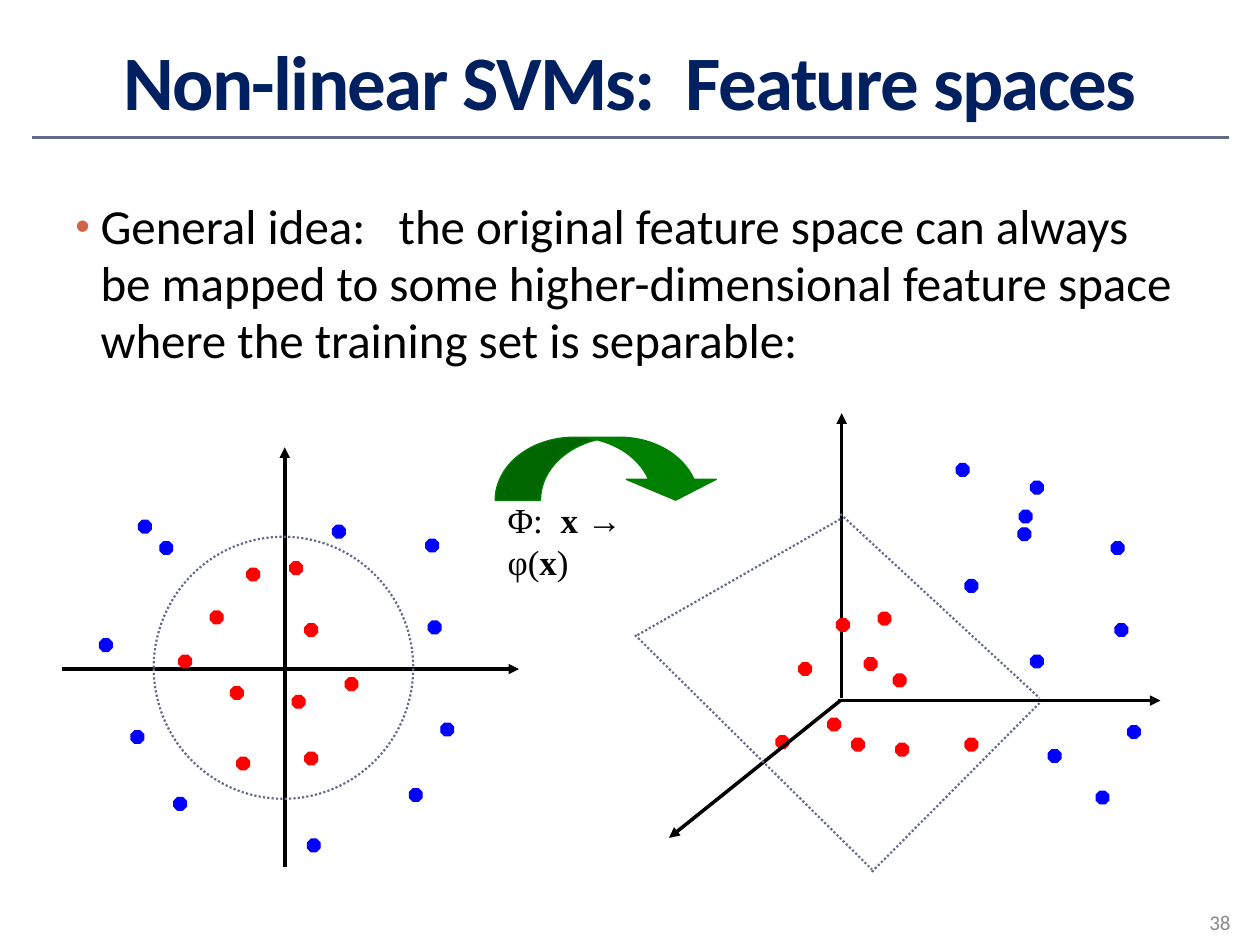
from dataclasses import dataclass

from pptx import Presentation
from pptx.dml.color import RGBColor
from pptx.enum.dml import MSO_LINE
from pptx.enum.shapes import MSO_CONNECTOR, MSO_SHAPE
from pptx.enum.text import MSO_ANCHOR, MSO_AUTO_SIZE, PP_ALIGN
from pptx.oxml.ns import qn
from pptx.util import Inches, Pt
from lxml import etree

STRAIGHT = MSO_CONNECTOR.STRAIGHT
OCTAGON, OVAL = MSO_SHAPE.OCTAGON, MSO_SHAPE.OVAL
ARROW = MSO_SHAPE.CURVED_DOWN_ARROW
DOTTED = MSO_LINE.ROUND_DOT
MIDDLE, TOP = MSO_ANCHOR.MIDDLE, MSO_ANCHOR.TOP
CENTER, LEFT = PP_ALIGN.CENTER, PP_ALIGN.LEFT
DOT = 0.1


@dataclass(frozen=True)
class Theme:
    navy: str = "002060"
    slate: str = "646B86"
    black: str = "000000"
    grey: str = "898989"
    bullet: str = "D16349"
    red: str = "FF0000"
    blue: str = "0000FF"
    green: str = "008000"
    sans: str = "Calibri"
    serif: str = "Times New Roman"
    title: int = 44
    body: int = 28
    math: int = 20
    note: int = 12


@dataclass(frozen=True)
class Line:
    start: tuple[float, float]
    end: tuple[float, float]
    color: str
    width: float
    arrow: bool = False
    dotted: bool = False


@dataclass(frozen=True)
class Cloud:
    color: str
    spots: tuple[tuple[float, float], ...]


T = Theme()


def axis(start: tuple[float, float], end: tuple[float, float]) -> Line:
    return Line(start, end, T.black, 2, arrow=True)


def edge(start: tuple[float, float], end: tuple[float, float]) -> Line:
    return Line(start, end, T.slate, 1.25, dotted=True)


RULE = Line((0.25, 1.09), (9.75, 1.09), T.slate, 1.5)
FLAT_AXES = (axis((2.26, 6.88), (2.26, 3.55)), axis((0.49, 5.31), (4.12, 5.31)))
DEEP_AXES = (axis((6.68, 5.54), (6.68, 3.28)), axis((6.65, 5.56), (9.21, 5.56)))
FRONT = (
    axis((6.67, 5.56), (5.31, 6.65)),
    edge((6.67, 4.08), (8.25, 5.54)),
    edge((6.92, 6.92), (8.25, 5.58)),
    edge((5.06, 5.04), (6.67, 4.12)),
    edge((5.04, 5.04), (6.92, 6.9)),
)
FLAT_DOTS = (
    Cloud(T.red, (
        (2.3, 4.46), (1.67, 4.85), (1.83, 5.45), (2.42, 5.97), (1.96, 4.51),
        (1.42, 5.2), (1.88, 6.01), (2.42, 4.95), (2.74, 5.38), (2.32, 5.52))),
    Cloud(T.blue, (
        (3.4, 4.93), (3.25, 6.26), (0.79, 5.07), (2.44, 6.66), (3.5, 5.74),
        (1.38, 6.33), (1.04, 5.8), (1.1, 4.13), (2.64, 4.17), (1.27, 4.3),
        (3.38, 4.28))),
)
DEEP_DOTS = (
    Cloud(T.red, (
        (6.97, 4.86), (6.34, 5.26), (6.76, 5.86), (7.66, 5.86), (6.64, 4.91),
        (6.86, 5.22), (7.11, 5.9), (7.09, 5.35), (6.57, 5.7), (6.16, 5.84))),
    Cloud(T.blue, (
        (8.85, 4.95), (8.7, 6.28), (8.18, 3.82), (8.18, 5.2), (8.95, 5.76),
        (7.66, 4.6), (8.32, 5.95), (8.09, 4.05), (8.08, 4.19), (7.59, 3.68),
        (8.82, 4.3))),
)


def rgb(color: str) -> RGBColor:
    return RGBColor.from_string(color)


def draw_line(slide, line: Line) -> None:
    ends = [Inches(v) for v in (*line.start, *line.end)]
    item = slide.shapes.add_connector(STRAIGHT, *ends)
    item.line.color.rgb = rgb(line.color)
    item.line.width = Pt(line.width)
    if line.dotted:
        item.line.dash_style = DOTTED
    props = item._element.spPr
    if line.arrow:
        etree.SubElement(props.find(qn("a:ln")), qn("a:tailEnd"), type="triangle")
    etree.SubElement(props, qn("a:effectLst"))


def draw_shape(slide, kind, box: tuple, color: str, width: float = 0.75, filled: bool = True):
    item = slide.shapes.add_shape(kind, *map(Inches, box))
    item.shadow.inherit = False
    if filled:
        item.fill.solid()
        item.fill.fore_color.rgb = rgb(color)
    else:
        item.fill.background()
    item.line.color.rgb = rgb(color)
    item.line.width = Pt(width)
    return item


def draw_dots(slide, clouds: tuple[Cloud, ...]) -> None:
    for cloud in clouds:
        for left, top in cloud.spots:
            draw_shape(slide, OCTAGON, (left, top, DOT, DOT), cloud.color)


def place(item, box: tuple) -> None:
    for name, value in zip(("left", "top", "width", "height"), box):
        setattr(item, name, Inches(value))


def write(item, runs: tuple, font: str, size: int, color: str,
          align=LEFT, anchor=TOP):
    """Fill one paragraph with (text, bold) runs and return it."""
    frame = item.text_frame
    form = {"word_wrap": True, "auto_size": MSO_AUTO_SIZE.NONE, "vertical_anchor": anchor}
    for name, value in form.items():
        setattr(frame, name, value)
    para = frame.paragraphs[0]
    para.alignment = align
    for text, bold in runs:
        run = para.add_run()
        run.text = text
        for name, value in {"name": font, "size": Pt(size), "bold": bold}.items():
            setattr(run.font, name, value)
        run.font.color.rgb = rgb(color)
    return para


def add_text(slide, box: tuple, *args, **form):
    item = slide.shapes.add_textbox(*map(Inches, box))
    return item, write(item, *args, **form)


def add_bullet(para) -> None:
    props = para._p.get_or_add_pPr()
    props.set("marL", str(Inches(0.2)))
    props.set("indent", str(Inches(-0.2)))
    tint = etree.SubElement(props, qn("a:buClr"))
    etree.SubElement(tint, qn("a:srgbClr"), val=T.bullet)
    etree.SubElement(props, qn("a:buSzPct"), val="85000")
    etree.SubElement(props, qn("a:buFont"), typeface="Arial")
    etree.SubElement(props, qn("a:buChar"), char="•")


def main() -> None:
    deck = Presentation()
    deck.slide_width, deck.slide_height = Inches(10), Inches(7.5)
    slide = deck.slides.add_slide(deck.slide_layouts[5])

    draw_line(slide, RULE)
    title = slide.shapes.title
    place(title, (0.5, 0.17, 9, 0.92))
    head = write(title, (("Non-linear SVMs:  Feature spaces", True),),
                 T.sans, T.title, T.navy, align=CENTER, anchor=MIDDLE)
    head.runs[0]._r.get_or_add_rPr().set("spc", "-100")
    add_text(slide, (9.5, 7.14, 0.5, 0.36), (("38", False),),
             T.sans, T.note, T.grey, anchor=MIDDLE)

    idea = ("General idea:   the original feature space can always be mapped to some "
            "higher-dimensional feature space where the training set is separable:")
    body, para = add_text(slide, (0.5, 1.25, 9, 5.83), ((idea, False),),
                          T.sans, T.body, T.black)
    body.text_frame.margin_top = Inches(0.33)
    para.line_spacing = 0.97
    add_bullet(para)

    for line in FLAT_AXES:
        draw_line(slide, line)
    draw_dots(slide, FLAT_DOTS)
    ring = draw_shape(slide, OVAL, (1.22, 4.26, 2.06, 2.08), T.slate, 1.25, filled=False)
    ring.line.dash_style = DOTTED

    for line in DEEP_AXES:
        draw_line(slide, line)
    draw_dots(slide, DEEP_DOTS)
    for line in FRONT:
        draw_line(slide, line)

    arrow = draw_shape(slide, ARROW, (3.93, 3.47, 1.79, 0.5), T.green)
    for spot, value in enumerate((0.72, 1.43, 0.33)):
        arrow.adjustments[spot] = value
    add_text(slide, (3.93, 3.91, 1.65, 0.43),
             (("Φ:  ", False), ("x → ", True), ("φ(", False), ("x", True), (")", False)),
             T.serif, T.math, T.black)
    deck.save("out.pptx")


if __name__ == "__main__":
    main()
